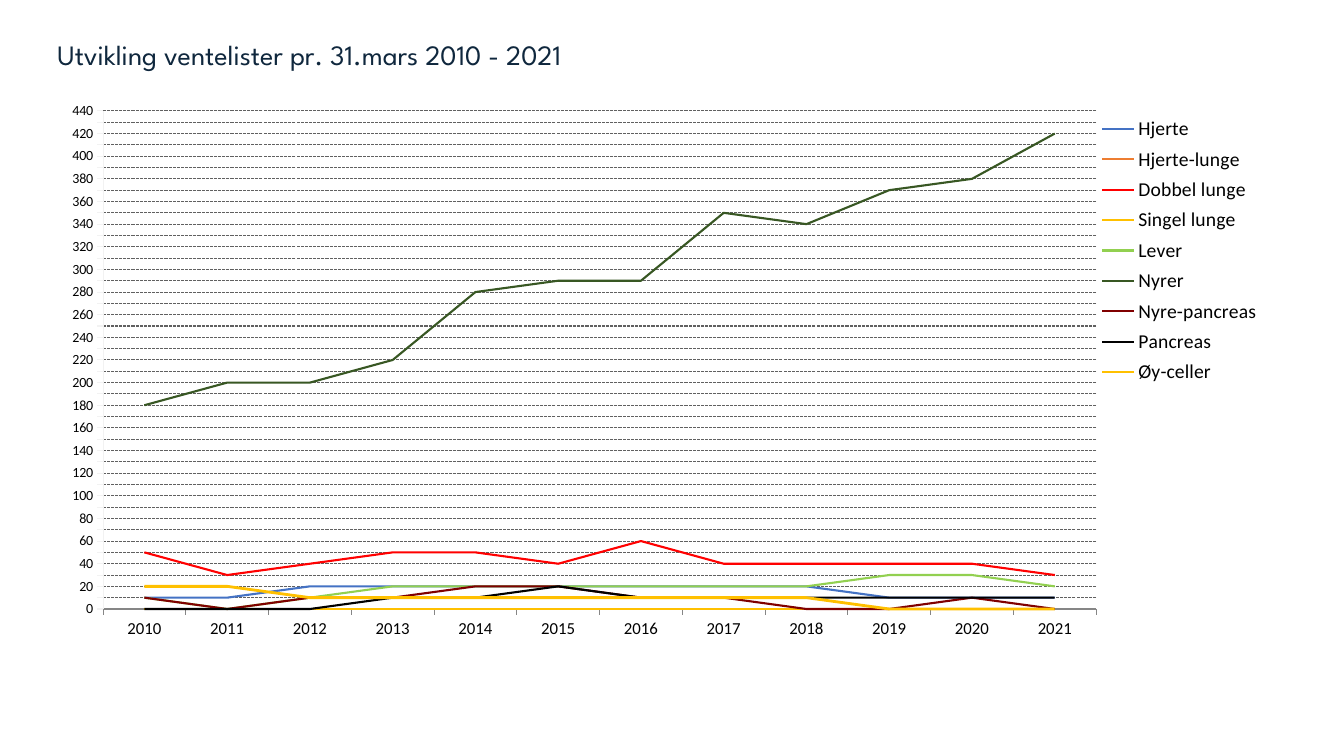
from lxml.etree import SubElement
from pptx import Presentation
from pptx.chart.data import CategoryChartData
from pptx.dml.color import RGBColor
from pptx.enum.chart import XL_CHART_TYPE, XL_LEGEND_POSITION, XL_MARKER_STYLE, XL_TICK_MARK
from pptx.enum.dml import MSO_LINE
from pptx.enum.text import MSO_ANCHOR
from pptx.oxml.ns import qn
from pptx.util import Pt

# Content
HEADING = "Utvikling ventelister pr. 31.mars 2010 - 2021"
YEARS = [str(year) for year in range(2010, 2022)]
WAITING_LISTS = [
    # organ, colour, line width, patients per year
    ("Hjerte", "4472C4", 1.5, (10, 10, 20, 20, 20, 20, 20, 20, 20, 10, 10, 10)),
    ("Hjerte-lunge", "ED7D31", 1.5, (0, 0, 0, 0, 0, 0, 0, 0, 0, 0, 0, 0)),
    ("Dobbel lunge", "FF0000", 1.5, (50, 30, 40, 50, 50, 40, 60, 40, 40, 40, 40, 30)),
    ("Singel lunge", "FFC000", 2, (0, 0, 0, 0, 0, 0, 0, 0, 0, 0, 0, 0)),
    ("Lever", "92D050", 1.5, (10, 0, 10, 20, 20, 20, 20, 20, 20, 30, 30, 20)),
    ("Nyrer", "385723", 1.5, (180, 200, 200, 220, 280, 290, 290, 350, 340, 370, 380, 420)),
    ("Nyre-pancreas", "800000", 1.5, (10, 0, 10, 10, 20, 20, 10, 10, 0, 0, 10, 0)),
    ("Pancreas", "000000", 1.5, (0, 0, 0, 10, 10, 20, 10, 10, 10, 10, 10, 10)),
    ("Øy-celler", "FFC000", 2, (20, 20, 10, 10, 10, 10, 10, 10, 10, 0, 0, 0)),
]

THEME = {
    "heading_font": "League Spartan", "chart_font": "Calibri",
    "heading": "0F273D", "text": "000000", "grid": "606060",
    "year_axis": "868686", "count_axis": "F2F2F2",
    "heading_size": 20, "legend_size": 14, "year_size": 12, "count_size": 10,
}

# Placement on the slide: left, top, width, height
LEFT, WIDTH = 34, 892
HEADING_BOX = (LEFT, 23, WIDTH, 34)
CHART_BOX = (LEFT, 66, WIDTH, 399)
PLOT_BOX = (73.6, 79.3, 709.4, 355.8)
LEGEND_BOX = (780, 79, 125, 200)


def style_font(font, size, color, name):
    values = {"size": Pt(size), "name": name, "bold": False}
    for key, value in values.items():
        setattr(font, key, value)
    font.color.rgb = RGBColor.from_string(color)


def style_line(line, color, width):
    line.color.rgb = RGBColor.from_string(color)
    line.width = Pt(width)


def place_part(parent, index, box, inner=False):
    """Fix a chart part to a box on the slide, as fractions of the chart."""
    for old in parent.findall(qn("c:layout")):
        parent.remove(old)
    layout = SubElement(parent, qn("c:layout"))
    parent.insert(index, layout)
    manual = SubElement(layout, qn("c:manualLayout"))
    if inner:
        SubElement(manual, qn("c:layoutTarget")).set("val", "inner")
    for key in "xy":
        SubElement(manual, qn(f"c:{key}Mode")).set("val", "edge")
    left, top, width, height = CHART_BOX
    fractions = {"x": (box[0] - left) / width, "y": (box[1] - top) / height,
                 "w": box[2] / width, "h": box[3] / height}
    for key, value in fractions.items():
        SubElement(manual, qn(f"c:{key}")).set("val", f"{value:.4f}")


def add_heading(slide):
    frame = slide.shapes.add_textbox(*map(Pt, HEADING_BOX)).text_frame
    frame.word_wrap = True
    frame.vertical_anchor = MSO_ANCHOR.MIDDLE
    paragraph = frame.paragraphs[0]
    paragraph.text = HEADING
    paragraph.line_spacing = 0.9
    style_font(paragraph.font, THEME["heading_size"], THEME["heading"], THEME["heading_font"])


def add_waiting_list_chart(slide):
    figures = CategoryChartData()
    figures.categories = YEARS
    for organ, _, _, patients in WAITING_LISTS:
        figures.add_series(organ, patients)
    chart = slide.shapes.add_chart(XL_CHART_TYPE.LINE, *map(Pt, CHART_BOX), figures).chart
    chart.has_title = False
    style_font(chart.font, 18, THEME["text"], THEME["chart_font"])

    # Lines
    plot = chart.plots[0]
    plot.vary_by_categories = False
    for series, (_, color, width, _) in zip(plot.series, WAITING_LISTS):
        series.smooth = False
        series.marker.style = XL_MARKER_STYLE.NONE
        style_line(series.format.line, color, width)

    # Axes
    counts, years = chart.value_axis, chart.category_axis
    scale = {"minimum_scale": 0, "maximum_scale": 440, "major_unit": 10,
             "has_major_gridlines": True}
    for key, value in scale.items():
        setattr(counts, key, value)
    for axis, part in ((counts, "count"), (years, "year")):
        axis.major_tick_mark = XL_TICK_MARK.OUTSIDE
        style_line(axis.format.line, THEME[f"{part}_axis"], 0.75)
        style_font(axis.tick_labels.font, THEME[f"{part}_size"], THEME["text"],
                   THEME["chart_font"])
    grid = counts.major_gridlines.format.line
    style_line(grid, THEME["grid"], 0.75)
    grid.dash_style = MSO_LINE.SQUARE_DOT

    # Legend and plot area
    chart.has_legend = True
    legend = chart.legend
    legend.position = XL_LEGEND_POSITION.RIGHT
    legend.include_in_layout = False
    style_font(legend.font, THEME["legend_size"], THEME["text"], THEME["chart_font"])
    chart_space = plot._element.getroottree().getroot()
    place_part(chart_space.find(".//" + qn("c:plotArea")), 0, PLOT_BOX, inner=True)
    place_part(chart_space.find(".//" + qn("c:legend")), 1, LEGEND_BOX)


def main():
    deck = Presentation()
    deck.slide_width, deck.slide_height = Pt(960), Pt(540)
    slide = deck.slides.add_slide(deck.slide_layouts[6])
    add_heading(slide)
    add_waiting_list_chart(slide)
    deck.save("out.pptx")


if __name__ == "__main__":
    main()
